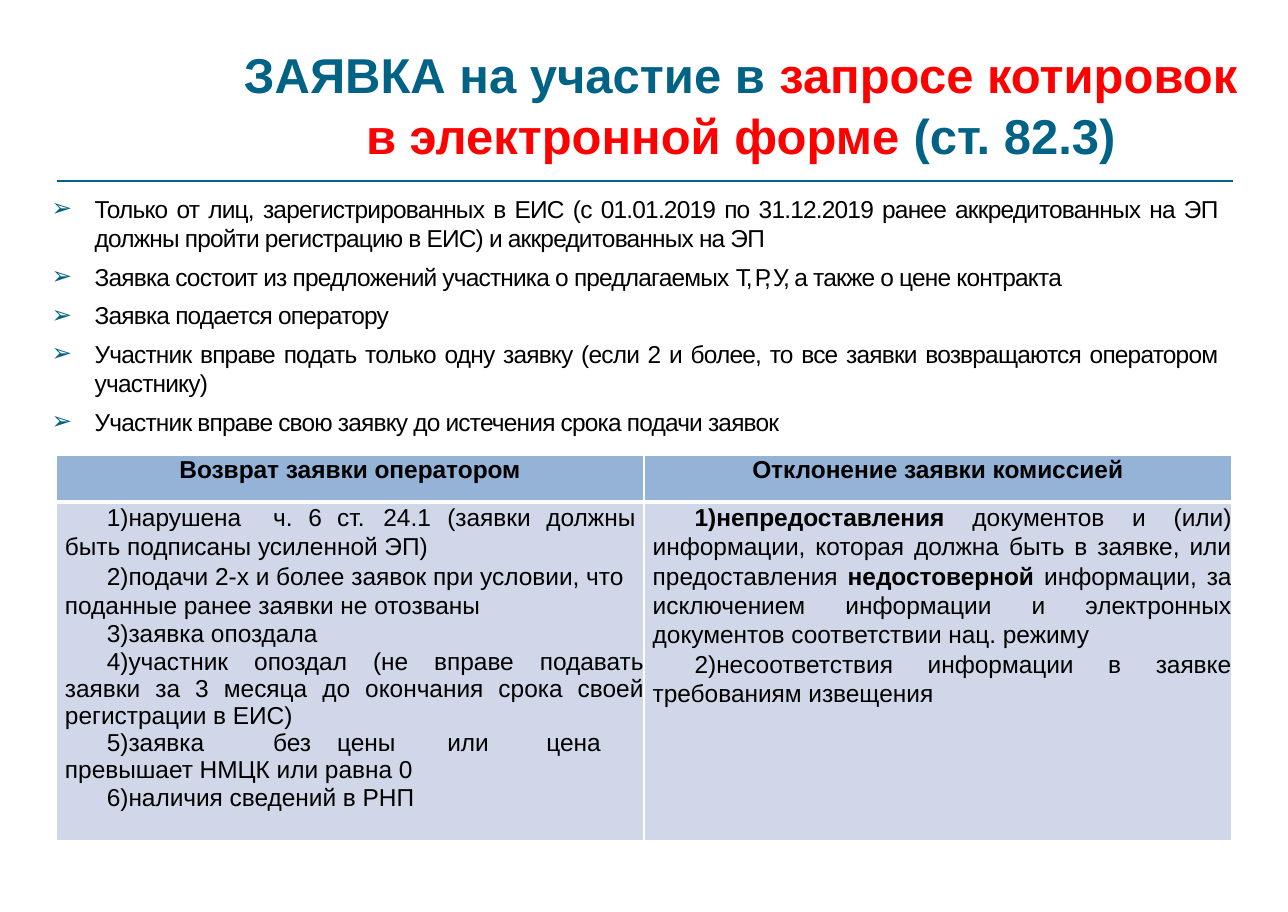
import pptx
import pptx.util
import pptx.dml.color
import pptx.enum.shapes
import pptx.enum.text
import pptx.oxml.ns
from dataclasses import dataclass
from lxml import etree

ALIGN = pptx.enum.text.PP_ALIGN
Pt = pptx.util.Pt
Inches = pptx.util.Inches


@dataclass(frozen=True)
class Theme:
    font: str = "Arial"
    teal: str = "006284"
    red: str = "FF0000"
    text: str = "000000"
    line: str = "FFFFFF"
    header_fill: str = "94B3D6"
    body_fill: str = "D0D7E8"
    title_size: float = 32
    body_size: float = 16


def add_xml(parent, tag, index=None, **attributes):
    """Add a drawing element to parent, at the end or at an index."""
    child = etree.Element(pptx.oxml.ns.qn(f"a:{tag}"),
                          {name: str(value) for name, value in attributes.items()})
    parent.insert(len(parent) if index is None else index, child)
    return child


class SlideBuilder:
    def __init__(self, deck, theme):
        self.deck, self.theme = deck, theme
        self.slide = deck.slides.add_slide(deck.slide_layouts[5])

    def x(self, percent):
        return round(self.deck.slide_width * percent / 100)

    def y(self, percent):
        return round(self.deck.slide_height * percent / 100)

    def box(self, left, top, width, height):
        return self.x(left), self.y(top), self.x(width), self.y(height)

    def run(self, paragraph, text, color=None, size=None, bold=False, spacing=0):
        run = paragraph.add_run()
        run.text = text
        run.font.name = self.theme.font
        run.font.size = Pt(size or self.theme.body_size)
        run.font.bold = bold
        run.font.color.rgb = pptx.dml.color.RGBColor.from_string(color or self.theme.text)
        if spacing:
            run.font._element.set("spc", str(round(spacing * 100)))

    def indent(self, paragraph, margin, first):
        properties = paragraph._p.get_or_add_pPr()
        properties.set("marL", str(Inches(margin)))
        properties.set("indent", str(Inches(first)))
        return properties

    def paragraphs(self, frame, count):
        return [frame.paragraphs[0]] + [frame.add_paragraph() for _ in range(count - 1)]

    def margins(self, frame, top=0):
        frame.margin_left = frame.margin_right = frame.margin_bottom = 0
        frame.margin_top = Inches(top)
        frame.word_wrap = True

    def title(self, area, runs):
        heading = self.slide.shapes.title
        heading.left, heading.top, heading.width, heading.height = self.box(*area)
        frame = heading.text_frame
        self.margins(frame, top=0.35)
        frame.auto_size = pptx.enum.text.MSO_AUTO_SIZE.NONE
        frame.vertical_anchor = pptx.enum.text.MSO_ANCHOR.TOP
        line = frame.paragraphs[0]
        line.alignment = ALIGN.CENTER
        line.line_spacing = 1.03
        self.indent(line, 1.75, 0)
        for text, color in runs:
            self.run(line, text, color, self.theme.title_size, bold=True)

    def rule(self, left, top, width):
        rule = self.slide.shapes.add_connector(
            pptx.enum.shapes.MSO_CONNECTOR.STRAIGHT,
            self.x(left), self.y(top), self.x(left + width), self.y(top))
        rule.line.color.rgb = pptx.dml.color.RGBColor.from_string(self.theme.teal)
        rule.line.width = Pt(1.42)
        add_xml(rule._element.spPr, "effectLst")

    def bullets(self, area, items):
        frame = self.slide.shapes.add_textbox(*self.box(*area)).text_frame
        self.margins(frame, top=0.01)
        for number, (line, runs) in enumerate(zip(self.paragraphs(frame, len(items)), items)):
            line.alignment = ALIGN.JUSTIFY
            line.space_before = Pt(6 if number else 0.9)
            properties = self.indent(line, 0.41, -0.39)
            add_xml(add_xml(properties, "buClr"), "srgbClr", val=self.theme.teal)
            add_xml(properties, "buFont", typeface=self.theme.font)
            add_xml(properties, "buChar", char="➢")
            for text, spacing in runs:
                self.run(line, text, spacing=spacing)

    def cell(self, cell, fill, top_border, bottom_border):
        cell.margin_left = cell.margin_right = cell.margin_top = cell.margin_bottom = 0
        cell.fill.solid()
        cell.fill.fore_color.rgb = pptx.dml.color.RGBColor.from_string(fill)
        widths = {"lnL": 1, "lnR": 1, "lnT": top_border, "lnB": bottom_border}
        for index, (side, width) in enumerate(widths.items()):
            border = add_xml(cell._tc.get_or_add_tcPr(), side, index, w=Pt(width))
            add_xml(add_xml(border, "solidFill"), "srgbClr", val=self.theme.line)

    def numbered(self, frame, items, tabs):
        for line, (alignment, spacing, runs) in zip(self.paragraphs(frame, len(items)), items):
            line.alignment = alignment
            line.line_spacing = Pt(spacing)
            properties = self.indent(line, 0.08, 0.38)
            add_xml(properties, "buFont", typeface=self.theme.font)
            add_xml(properties, "buAutoNum", type="arabicParenR")
            stops = add_xml(properties, "tabLst")
            for tab in tabs:
                add_xml(stops, "tab", pos=Inches(tab), algn="l")
            for text, bold in runs:
                self.run(line, text, bold=bold)

    def table(self, left, top, width, row_heights, columns):
        area = self.box(left, top, width, sum(row_heights))
        table = self.slide.shapes.add_table(2, len(columns), *area).table
        table.first_row = table.horz_banding = False
        for row, height in zip(table.rows, row_heights):
            row.height = self.y(height)
        for index, (heading, items, tabs) in enumerate(columns):
            table.columns[index].width = self.x(width / len(columns))
            header, body = table.cell(0, index), table.cell(1, index)
            self.cell(header, self.theme.header_fill, 1, 3)
            self.cell(body, self.theme.body_fill, 3, 2.25)
            line = header.text_frame.paragraphs[0]
            line.alignment = ALIGN.CENTER
            line.line_spacing = Pt(18.9)
            self.run(line, heading, bold=True)
            self.numbered(body.text_frame, items, tabs)


def main():
    deck = pptx.Presentation()
    deck.slide_width, deck.slide_height = Inches(11.69), Inches(8.28)
    theme = Theme()
    page = SlideBuilder(deck, theme)

    # Heading and rule
    page.title((3.08, 0.48, 93.93, 19.08), [
        ("ЗАЯВКА на участие в ", theme.teal),
        ("запросе котировок в электронной форме ", theme.red),
        ("(ст. 82.3)", theme.teal)])
    page.rule(4.45, 19.81, 91.27)

    # Requirements for the application
    normal, tight = -0.5, -1.5
    page.bullets((3.85, 21.14, 90.76, 26.93), [
        [("Только от лиц, зарегистрированных в ЕИС (с 01.01.2019 по 31.12.2019 ранее "
          "аккредитованных на ЭП должны пройти регистрацию в ЕИС) и аккредитованных на ЭП", normal)],
        [("Заявка состоит из предложений участника о предлагаемых ", normal),
         ("Т, Р, У, ", tight),
         ("а также о цене контракта", normal)],
        [("Заявка подается оператору", normal)],
        [("Участник вправе подать только одну заявку (если 2 и более, то все заявки "
          "возвращаются оператором участнику)", normal)],
        [("Участник вправе свою заявку до истечения срока подачи заявок", normal)]])

    # Grounds for return and for rejection
    loose, medium, compact = 19.2, 18.5, 17.8
    returned = [
        (ALIGN.LEFT, loose,
         [("нарушена\tч.\t6\tст.\t24.1\t(заявки\tдолжны быть подписаны усиленной ЭП)", False)]),
        (ALIGN.LEFT, loose,
         [("подачи 2-х и более заявок при условии, что поданные ранее заявки не отозваны", False)]),
        (ALIGN.LEFT, medium, [("заявка опоздала", False)]),
        (ALIGN.JUSTIFY, compact,
         [("участник опоздал (не вправе подавать заявки за 3 месяца до окончания срока "
           "своей регистрации в ЕИС)", False)]),
        (ALIGN.LEFT, compact,
         [("заявка\tбез\tцены\tили\tцена превышает НМЦК или равна 0", False)]),
        (ALIGN.LEFT, compact, [("наличия сведений в РНП", False)])]
    rejected = [
        (ALIGN.JUSTIFY, loose,
         [("непредоставления ", True),
          ("документов и (или) информации, которая должна быть в заявке, или предоставления ", False),
          ("недостоверной ", True),
          ("информации, за исключением информации и электронных документов "
           "соответствии нац. режиму", False)]),
        (ALIGN.JUSTIFY, loose,
         [("несоответствия информации в заявке требованиям извещения", False)])]
    page.table(4.36, 49.88, 91.27, (5.19, 37.2), [
        ("Возврат заявки оператором", returned, (0.8, 1.97, 2.29, 2.55, 2.97, 3.55, 4.45)),
        ("Отклонение заявки комиссией", rejected, (0.82,))])

    deck.save("out.pptx")


if __name__ == "__main__":
    main()
